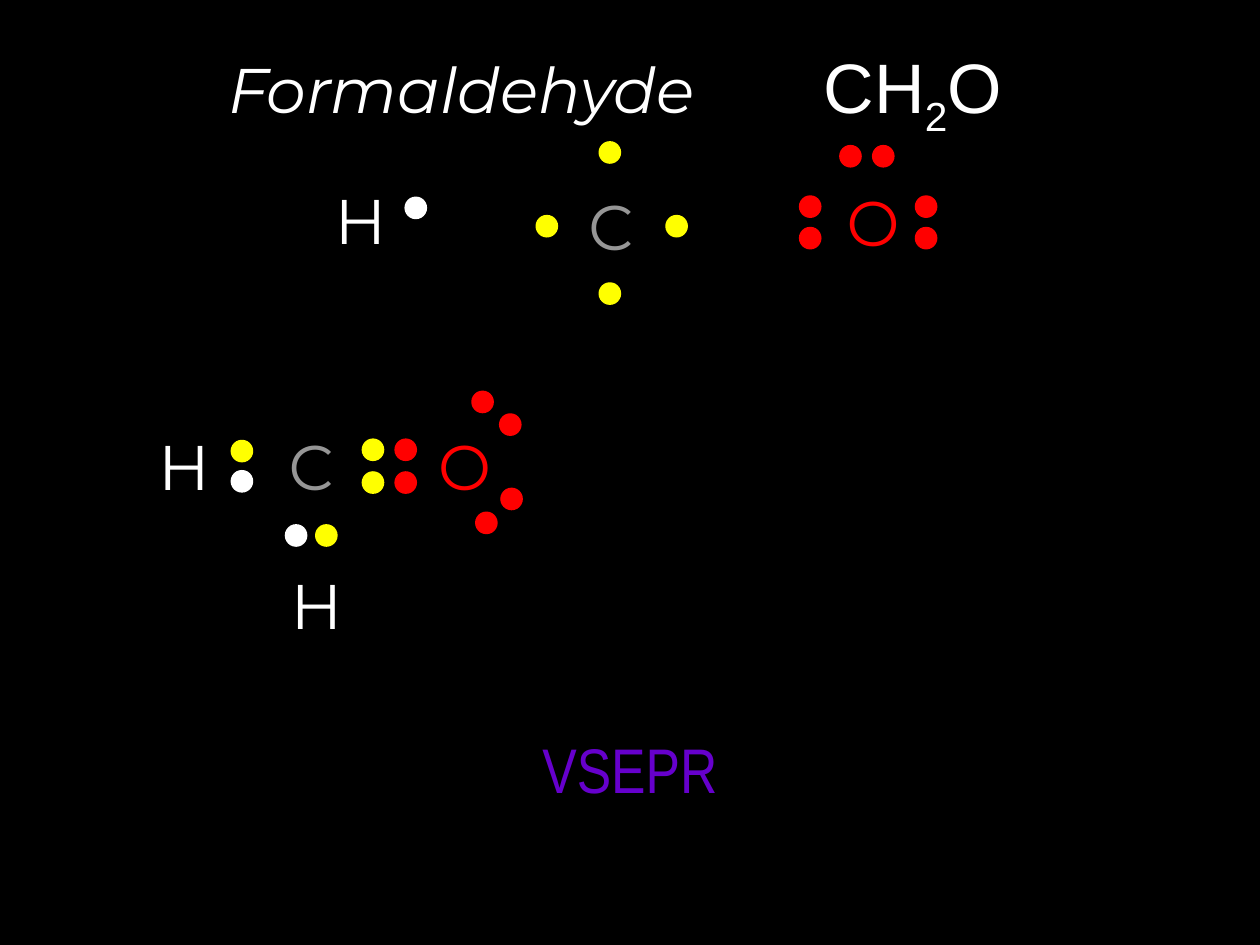
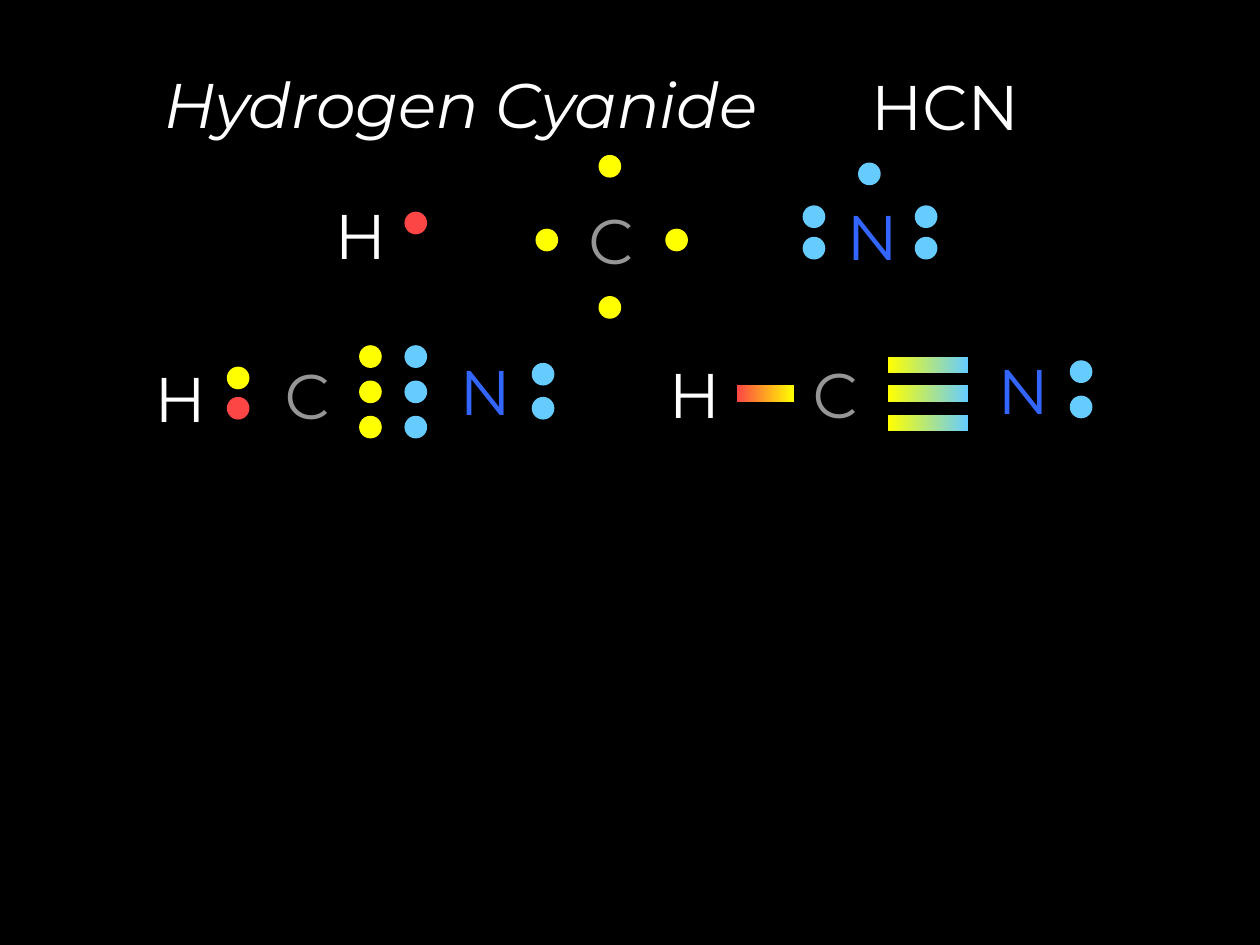
import pptx
import pptx.dml.color
import pptx.enum.shapes
import pptx.enum.text
import pptx.oxml.ns
import pptx.util

COLUMNS, ROWS = 100, 75
CELL = pptx.util.Inches(10) // COLUMNS
DOT = 1.8
ATOM_WIDTH, ATOM_HEIGHT = 5.6, 7.1
BODY_FONT = "Montserrat"
WHITE, BLACK, YELLOW, RED = "FFFFFF", "000000", "FFFF00", "FF0000"
CORAL, SKY, PURPLE = "FC4646", "66CCFF", "6600CC"
ATOM_COLORS = {"H": WHITE, "C": "969696", "O": RED, "N": "3366FF"}


def rgb(value):
    return pptx.dml.color.RGBColor.from_string(value)


def cells(*lengths):
    return [round(length * CELL) for length in lengths]


def add_text(shapes, area, runs, color=WHITE, size=36, font=BODY_FONT,
             italic=False, wrap=False):
    frame = shapes.add_textbox(*cells(*area)).text_frame
    frame.word_wrap = wrap
    paragraph = frame.paragraphs[0]
    if not wrap:
        paragraph.alignment = pptx.enum.text.PP_ALIGN.CENTER
    for wording, baseline in runs:
        run = paragraph.add_run()
        run.text = wording
        run.font.name = font
        run.font.size = pptx.util.Pt(size)
        run.font.italic = italic
        run.font.color.rgb = rgb(color)
        if baseline:
            run.font._element.set("baseline", str(baseline * 1000))


def add_title(slide, name, top):
    add_text(slide.shapes, (11.8, top, 49.6, 7), [(name, 0)], italic=True)


def add_atom(shapes, symbol, left, top, width=ATOM_WIDTH):
    add_text(shapes, (left, top, width, ATOM_HEIGHT), [(symbol, 0)],
             ATOM_COLORS[symbol])


def add_plain(shapes, kind, area):
    part = shapes.add_shape(kind, *cells(*area))
    part.shadow.inherit = False
    part.line.fill.background()
    return part


def add_electrons(shapes, color, *places):
    for left, top in places:
        electron = add_plain(shapes, pptx.enum.shapes.MSO_SHAPE.OVAL,
                             (left, top, DOT, DOT))
        electron.fill.solid()
        electron.fill.fore_color.rgb = rgb(color)


def stacked(left, top, gap, count=2):
    return [(left, top + gap * i) for i in range(count)]


def add_bond(shapes, left, top, width, start, end):
    bond = add_plain(shapes, pptx.enum.shapes.MSO_SHAPE.RECTANGLE,
                     (left, top, width, 1.3))
    bond.fill.gradient()
    bond.fill.gradient_angle = 0
    for stop, color in zip(bond.fill.gradient_stops, (start, end)):
        stop.color.rgb = rgb(color)


def add_free_hydrogen(shapes, top, electron_color):
    add_atom(shapes, "H", 25.6, top, 5.1)
    add_electrons(shapes, electron_color, (32.1, top + 1.7))


def add_free_carbon(shapes, top):
    add_atom(shapes, "C", 45.7, top)
    add_electrons(shapes, YELLOW, (42.5, top + 2.65), (52.8, top + 2.65),
                  (47.5, top - 3.2), (47.5, top + 8))


def new_slide(deck):
    slide = deck.slides.add_slide(deck.slide_layouts[6])
    slide.background.fill.solid()
    slide.background.fill.fore_color.rgb = rgb(BLACK)
    return slide


def build_formaldehyde(deck):
    slide = new_slide(deck)
    add_title(slide, "Formaldehyde", 3.5)
    add_text(slide.shapes, (64.4, 3, 21.1, 7.7),
             [("CH", 0), ("2", -25), ("O", 0)], size=40, font="Arial", wrap=True)
    add_free_hydrogen(slide.shapes, 13.9, WHITE)
    add_free_carbon(slide.shapes, 14.4)
    add_atom(slide.shapes, "O", 66.2, 14.1, 5.5)
    for lone_pair in (stacked(63.4, 15.5, 2.5), stacked(72.6, 15.5, 2.5),
                      [(66.6, 11.5), (69.2, 11.5)]):
        add_electrons(slide.shapes.add_group_shape().shapes, RED, *lone_pair)

    molecule = slide.shapes.add_group_shape().shapes
    for symbol, left, top in (("H", 11.6, 33.4), ("C", 21.9, 33.4),
                              ("H", 22.1, 44.5), ("O", 33.8, 33.4)):
        add_atom(molecule, symbol, left, top)
    add_electrons(molecule, WHITE, (18.3, 37.3), (22.6, 41.6))
    add_electrons(molecule, YELLOW, (18.3, 34.9), (25, 41.6),
                  *stacked(28.7, 34.8, 2.6))
    add_electrons(molecule, RED, *stacked(31.3, 34.8, 2.6), (37.4, 31),
                  (39.6, 32.8), (39.7, 38.7), (37.7, 40.6))
    add_text(slide.shapes, (34.6, 57.5, 30.8, 9.5), [("VSEPR", 0)], PURPLE,
             font="Arial Narrow")


def build_hydrogen_cyanide(deck):
    slide = new_slide(deck)
    add_title(slide, "Hydrogen Cyanide", 4.7)
    add_text(slide.shapes, (67.8, 4.9, 14.4, 5.2), [("HCN", 0)])
    add_free_hydrogen(slide.shapes, 15.1, CORAL)
    add_free_carbon(slide.shapes, 15.5)
    add_atom(slide.shapes, "N", 66.2, 15.2, 5.5)
    add_electrons(slide.shapes, SKY, (68.1, 12.9), *stacked(63.7, 16.3, 2.5),
                  *stacked(72.6, 16.3, 2.5))

    dot_structure = slide.shapes.add_group_shape().shapes
    for symbol, left, top in (("H", 11.3, 28), ("C", 21.6, 27.8), ("N", 35.5, 27.5)):
        add_atom(dot_structure, symbol, left, top)
    add_electrons(dot_structure, CORAL, (18, 31.5))
    add_electrons(dot_structure, YELLOW, (18, 29.1), *stacked(28.5, 27.4, 2.8, 3))
    add_electrons(dot_structure, SKY, *stacked(32.1, 27.4, 2.8, 3),
                  *stacked(42.2, 28.8, 2.7))

    bond_structure = slide.shapes.add_group_shape().shapes
    for symbol, left, top in (("H", 52.1, 27.7), ("C", 63.5, 27.7), ("N", 78.2, 27.4)):
        add_atom(bond_structure, symbol, left, top)
    add_electrons(bond_structure, SKY, *stacked(84.9, 28.6, 2.8))
    add_bond(bond_structure, 58.5, 30.6, 4.5, CORAL, YELLOW)
    for left, top in stacked(70.5, 28.3, 2.3, 3):
        add_bond(bond_structure, left, top, 6.3, YELLOW, SKY)


def main():
    deck = pptx.Presentation()
    deck.slide_width, deck.slide_height = cells(COLUMNS, ROWS)
    build_formaldehyde(deck)
    build_hydrogen_cyanide(deck)
    deck.save("out.pptx")


if __name__ == "__main__":
    main()
